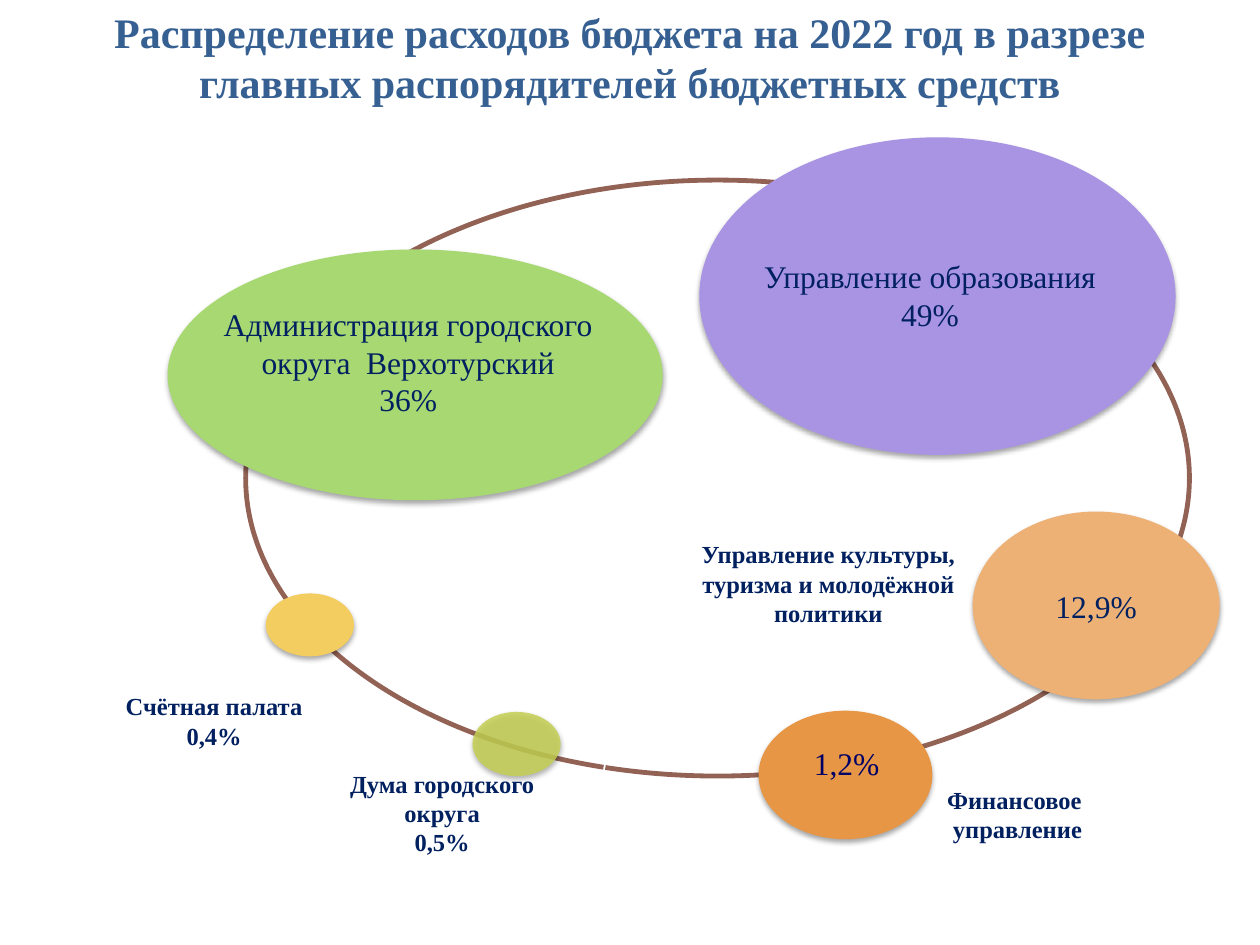
from lxml import etree
from pptx import Presentation
from pptx.dml.color import RGBColor
from pptx.enum.shapes import MSO_SHAPE
from pptx.enum.text import MSO_ANCHOR, PP_ALIGN
from pptx.oxml.ns import qn
from pptx.util import Inches, Pt

ARC, ELLIPSE = MSO_SHAPE.ARC, MSO_SHAPE.OVAL
MIDDLE, TOP, CENTER = MSO_ANCHOR.MIDDLE, MSO_ANCHOR.TOP, PP_ALIGN.CENTER

FONT = "Times New Roman"
WHITE = RGBColor(0xFF, 0xFF, 0xFF)
BLACK = RGBColor(0x00, 0x00, 0x00)
NAVY = RGBColor(0x00, 0x20, 0x60)
INDIGO = RGBColor(0x00, 0x00, 0x66)
TITLE_BLUE = RGBColor(0x37, 0x60, 0x92)
BROWN = RGBColor(0x92, 0x62, 0x55)
GREEN = RGBColor(0xA7, 0xD8, 0x72)
VIOLET = RGBColor(0xA9, 0x94, 0xE4)
PEACH = RGBColor(0xED, 0xB1, 0x76)
OLIVE = RGBColor(0xC4, 0xD0, 0x54)
YELLOW = RGBColor(0xF3, 0xCD, 0x60)
ORANGE = RGBColor(0xE7, 0x96, 0x45)

BUBBLES = [
    ((1.33, 1.98, 3.93, 1.99), GREEN, 100),
    ((5.55, 1.09, 3.78, 2.52), VIOLET, 100),
    ((7.72, 4.06, 1.96, 1.49), PEACH, 100),
    ((3.75, 5.65, 0.7, 0.51), OLIVE, 85),
    ((2.11, 4.71, 0.7, 0.5), YELLOW, 100),
    ((6.02, 5.64, 1.38, 1.02), ORANGE, 100),
]
NAMES = [
    ((5.31, 3.97, 2.53, 1.32), ["Управление культуры, туризма и молодёжной политики"]),
    ((7.24, 6.09, 1.67, 0.74), ["Финансовое  управление"]),
    ((2.58, 6.04, 1.86, 0.82), ["Дума городского округа", "0,5%"]),
    ((0.7, 5.36, 2, 0.72), ["Счётная палата", "0,4%"]),
]
SHARES = [
    ((7.72, 4.06, 1.96, 1.49), ["12,9%"], NAVY),
    ((6.25, 5.86, 0.94, 0.39), ["1,2%"], INDIGO),
    ((5.62, 1.56, 3.52, 1.56), ["Управление образования", "49%"], NAVY),
    ((1.56, 2.42, 3.36, 0.9), ["Администрация городского округа  Верхотурский", "36%"], NAVY),
]
TITLE = [
    "Распределение расходов бюджета на 2022 год в разрезе",
    "главных распорядителей бюджетных средств",
]


def set_alpha(color, percent):
    """Set the opacity of a colour element."""
    etree.SubElement(color, qn("a:alpha"), val=str(percent * 1000))


def add_shadow(s):
    """Give the shape a soft shadow that falls straight down."""
    effects = s._element.spPr.find(qn("a:effectLst"))
    shadow = etree.SubElement(effects, qn("a:outerShdw"), blurRad=str(Pt(3.1)),
                              dist=str(Pt(1.8)), dir="5400000", rotWithShape="0")
    set_alpha(etree.SubElement(shadow, qn("a:srgbClr"), val=str(BLACK)), 35)


def add_filled(slide, kind, box, color):
    """Add a filled preset shape without theme effects."""
    s = slide.shapes.add_shape(kind, *map(Inches, box))
    s.shadow.inherit = False
    s.fill.solid()
    s.fill.fore_color.rgb = color
    return s


def add_ring(slide):
    """Add the almost closed arc that links the bubbles."""
    s = add_filled(slide, ARC, (1.95, 1.43, 7.49, 4.73), WHITE)
    s.adjustments[0], s.adjustments[1] = 66.92, 66.71
    s.line.color.rgb = BROWN
    s.line.width = Pt(2.75)


def add_bubble(slide, box, color, opacity):
    """Add a borderless ellipse with a shadow."""
    s = add_filled(slide, ELLIPSE, box, color)
    s.line.fill.background()
    add_shadow(s)
    if opacity < 100:
        set_alpha(s._element.spPr.find(qn("a:solidFill"))[0], opacity)


def add_text(slide, box, lines, size, color, bold=False, anchor=MIDDLE):
    """Add a wrapped, centred text box with one paragraph per line."""
    tf = slide.shapes.add_textbox(*map(Inches, box)).text_frame
    tf.word_wrap = True
    tf.vertical_anchor = anchor
    tf.text = "\n".join(lines)
    for p in tf.paragraphs:
        p.alignment = CENTER
        p.font.name = FONT
        p.font.size = Pt(size)
        p.font.bold = bold
        p.font.color.rgb = color


def main():
    """Build the slide and save it."""
    prs = Presentation()
    prs.slide_width, prs.slide_height = Inches(10), Inches(7.5)
    slide = prs.slides.add_slide(prs.slide_layouts[6])
    add_ring(slide)
    for box, color, opacity in BUBBLES:
        add_bubble(slide, box, color, opacity)
    for box, lines in NAMES:
        add_text(slide, box, lines, 14, NAVY, bold=True)
    for box, lines, color in SHARES:
        add_text(slide, box, lines, 18, color)
    add_text(slide, (0, 0, 10, 0.91), TITLE, 24, TITLE_BLUE, bold=True, anchor=TOP)
    prs.save("out.pptx")


if __name__ == "__main__":
    main()
